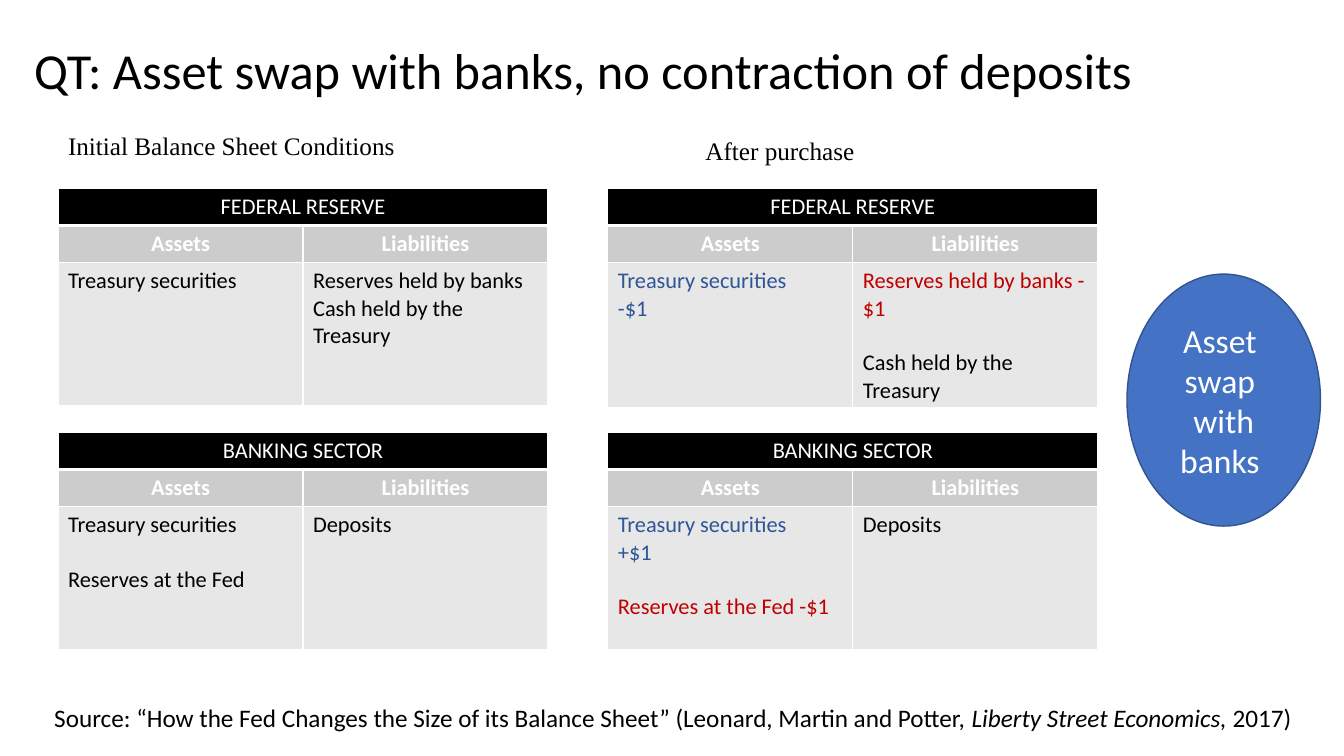
from lxml.etree import SubElement
from pptx import Presentation
from pptx.dml.color import RGBColor
from pptx.enum.shapes import MSO_SHAPE
from pptx.enum.text import MSO_ANCHOR, PP_ALIGN
from pptx.oxml.ns import qn
from pptx.util import Pt

BLACK, WHITE, BLUE, RED = "000000", "FFFFFF", "2F5597", "C00000"
BLANK_LINE = 19.5
ROW_HEIGHTS = (26.4, 26.4, 102.4)
TABLE_WIDTH = 350
LEFT_X, RIGHT_X = 41.5, 434.2
FED_Y, BANKS_Y = 134.6, 308.9


def color(hex_string):
    return RGBColor.from_string(hex_string)


def write(p, text, size=16, font="Calibri", fill=BLACK, bold=False, italic=False,
          align=PP_ALIGN.LEFT, before=0):
    """Add one formatted run to a paragraph."""
    p.alignment = align
    p.space_before = Pt(before)
    r = p.add_run()
    r.text = text
    r.font.size, r.font.name = Pt(size), font
    r.font.bold, r.font.italic = bold, italic
    r.font.color.rgb = color(fill)


def paragraph(tf, index):
    return tf.paragraphs[0] if index == 0 else tf.add_paragraph()


def text_box(s, box, runs, wrap=True, anchor=MSO_ANCHOR.TOP, line_spacing=1.0):
    """Add a one-paragraph text box; runs are (text, format) pairs."""
    tf = s.shapes.add_textbox(*map(Pt, box)).text_frame
    tf.word_wrap = wrap
    tf.vertical_anchor = anchor
    p = tf.paragraphs[0]
    p.line_spacing = line_spacing
    for text, style in runs:
        write(p, text, **style)


def style_cell(cell, fill, bottom=1):
    """Give a cell white borders and a solid fill."""
    tc_pr = cell._tc.get_or_add_tcPr()
    for side, width in (("L", 1), ("R", 1), ("T", 1), ("B", bottom)):
        ln = SubElement(tc_pr, qn(f"a:ln{side}"), w=str(Pt(width)))
        SubElement(SubElement(ln, qn("a:solidFill")), qn("a:srgbClr"), val=WHITE)
    cell.fill.solid()
    cell.fill.fore_color.rgb = color(fill)


def balance_sheet(s, x, y, name, assets, liabilities):
    """Add a balance sheet; entries are (text, format) pairs."""
    table = s.shapes.add_table(3, 2, Pt(x), Pt(y), Pt(TABLE_WIDTH),
                               Pt(sum(ROW_HEIGHTS))).table
    for row, height in zip(table.rows, ROW_HEIGHTS):
        row.height = Pt(height)
    for column in table.columns:
        column.width = Pt(TABLE_WIDTH / 2)
    table.cell(0, 0).merge(table.cell(0, 1))
    head = dict(fill=WHITE, align=PP_ALIGN.CENTER)
    write(table.cell(0, 0).text_frame.paragraphs[0], name, **head)
    for col, (side, entries) in enumerate((("Assets", assets), ("Liabilities", liabilities))):
        style_cell(table.cell(0, col), BLACK, bottom=3)
        style_cell(table.cell(1, col), "CCCCCC")
        style_cell(table.cell(2, col), "E7E7E7")
        write(table.cell(1, col).text_frame.paragraphs[0], side, bold=True, **head)
        tf = table.cell(2, col).text_frame
        for i, (text, style) in enumerate(entries):
            write(paragraph(tf, i), text, **style)


def callout(s, box, lines):
    sp = s.shapes.add_shape(MSO_SHAPE.OVAL, *map(Pt, box))
    sp.shadow.inherit = False
    sp.fill.solid()
    sp.fill.fore_color.rgb = color("4472C4")
    sp.line.color.rgb = color("325491")
    sp.line.width = Pt(1)
    tf = sp.text_frame
    tf.word_wrap = True
    tf.vertical_anchor = MSO_ANCHOR.MIDDLE
    for i, line in enumerate(lines):
        write(paragraph(tf, i), line, size=24, fill=WHITE, align=PP_ALIGN.CENTER)


def asset_swap_slide(prs):
    s = prs.slides.add_slide(prs.slide_layouts[6])
    plain, up, down = {}, dict(fill=BLUE), dict(fill=RED)
    gap = dict(before=BLANK_LINE)
    heading = dict(size=18, font="Times New Roman")
    source = dict(size=18)

    text_box(s, (17.3, 0, 933.8, 104.4),
             [("QT: Asset swap with banks, no contraction of deposits", dict(size=36))],
             anchor=MSO_ANCHOR.MIDDLE, line_spacing=0.9)
    text_box(s, (31.7, 498.2, 905, 29),
             [("Source: “How the Fed Changes the Size of its Balance Sheet” "
               "(Leonard, Martin and Potter, ", source),
              ("Liberty Street Economics, ", dict(size=18, italic=True)),
              ("2017)", source)], wrap=False)
    callout(s, (805, 195.8, 138.2, 180), ("Asset ", "swap ", "with banks "))

    text_box(s, (LEFT_X, 89.3, TABLE_WIDTH, 29),
             [("Initial Balance Sheet Conditions", heading)])
    balance_sheet(s, LEFT_X, FED_Y, "FEDERAL RESERVE",
                  [("Treasury securities", plain)],
                  [("Reserves held by banks", plain), ("Cash held by the Treasury", plain)])
    balance_sheet(s, LEFT_X, BANKS_Y, "BANKING SECTOR",
                  [("Treasury securities", plain), ("Reserves at the Fed", gap)],
                  [("Deposits", plain)])

    text_box(s, (496.8, 93.3, TABLE_WIDTH, 29), [("After purchase", heading)])
    balance_sheet(s, RIGHT_X, FED_Y, "FEDERAL RESERVE",
                  [("Treasury securities", up), ("-$1", up)],
                  [("Reserves held by banks -$1", down), ("Cash held by the Treasury", gap)])
    balance_sheet(s, RIGHT_X, BANKS_Y, "BANKING SECTOR",
                  [("Treasury securities", up), ("+$1", up),
                   ("Reserves at the Fed -$1", down | gap)],
                  [("Deposits", plain)])


def main():
    prs = Presentation()
    prs.slide_width, prs.slide_height = Pt(960), Pt(540)
    asset_swap_slide(prs)
    prs.save("out.pptx")


if __name__ == "__main__":
    main()
